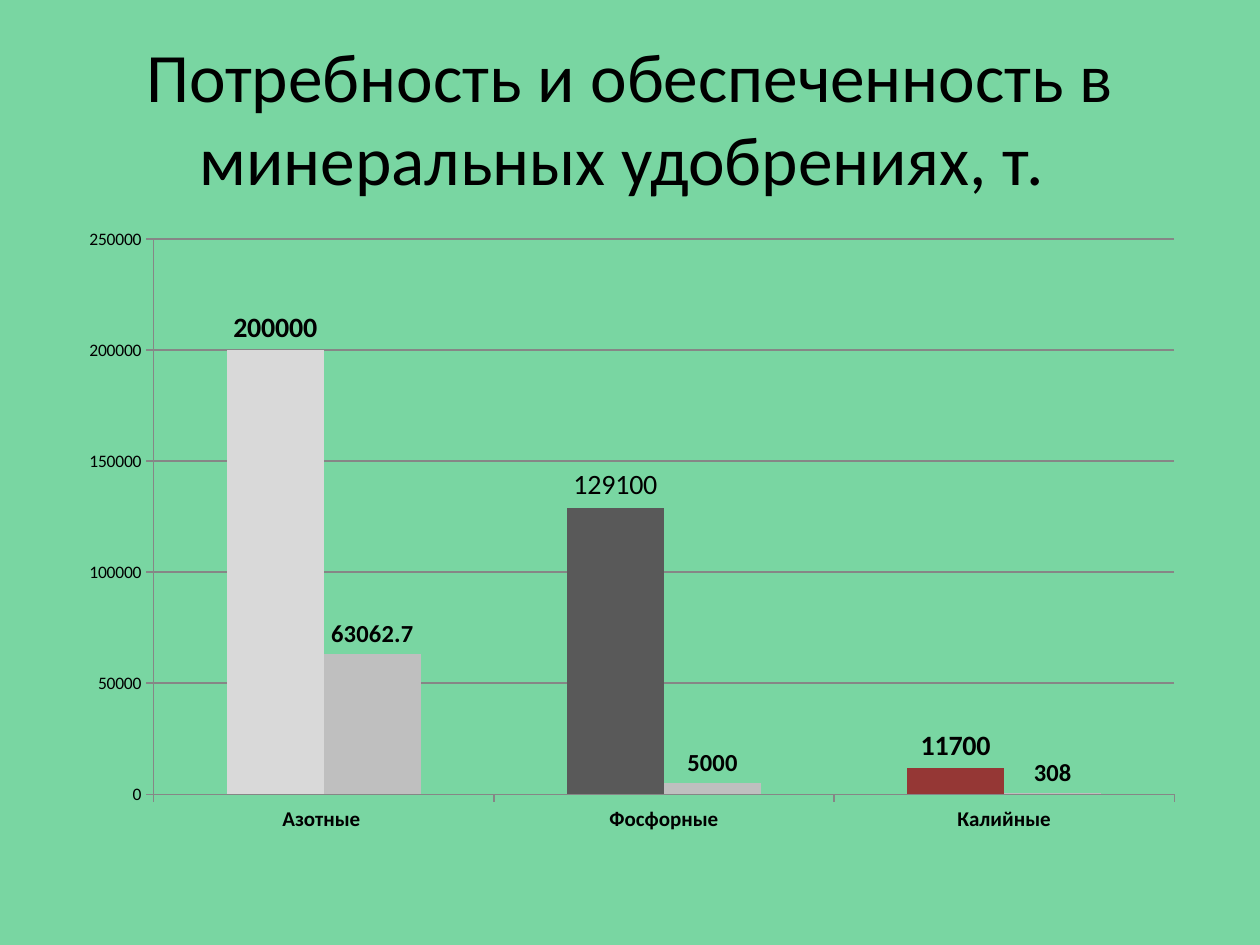
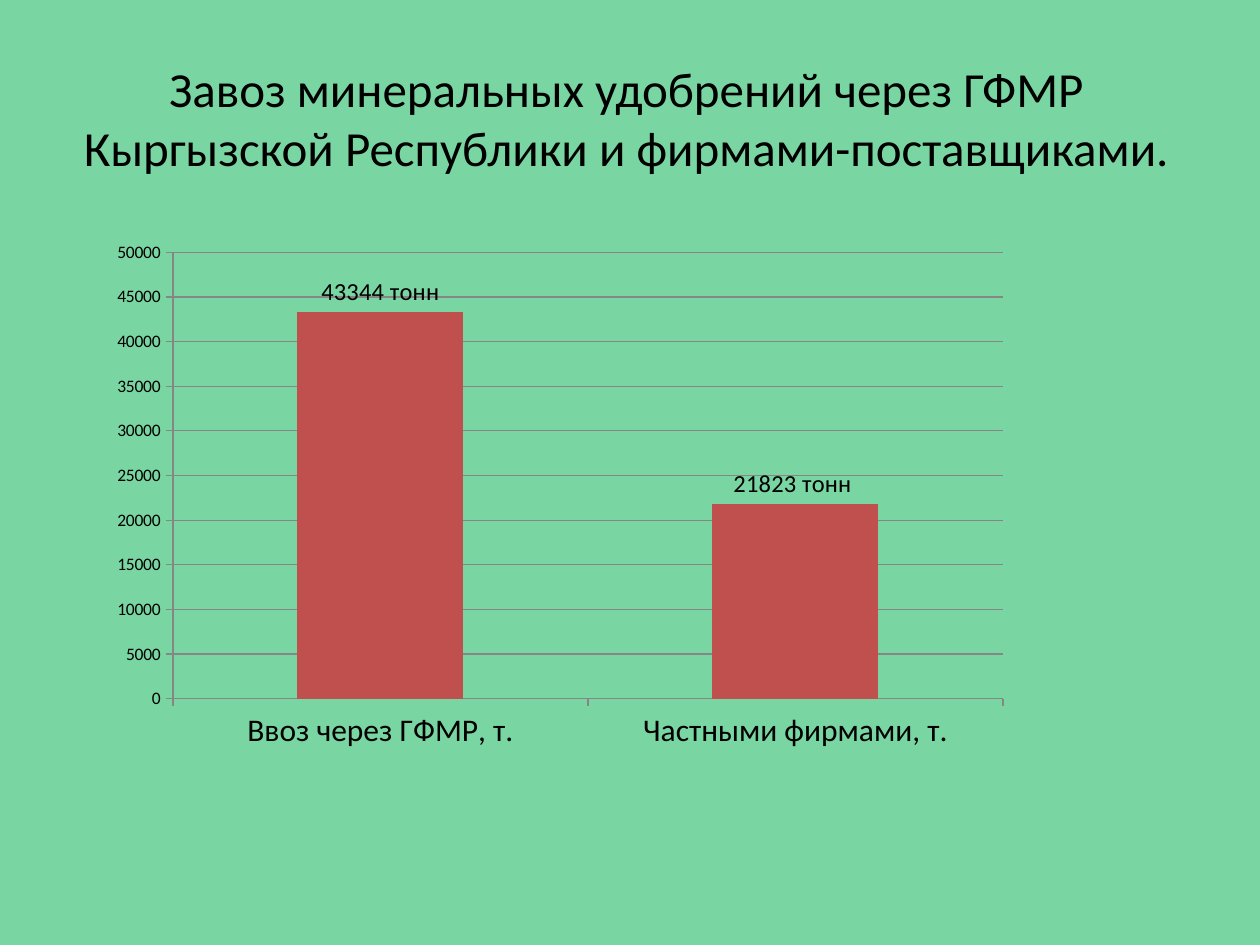
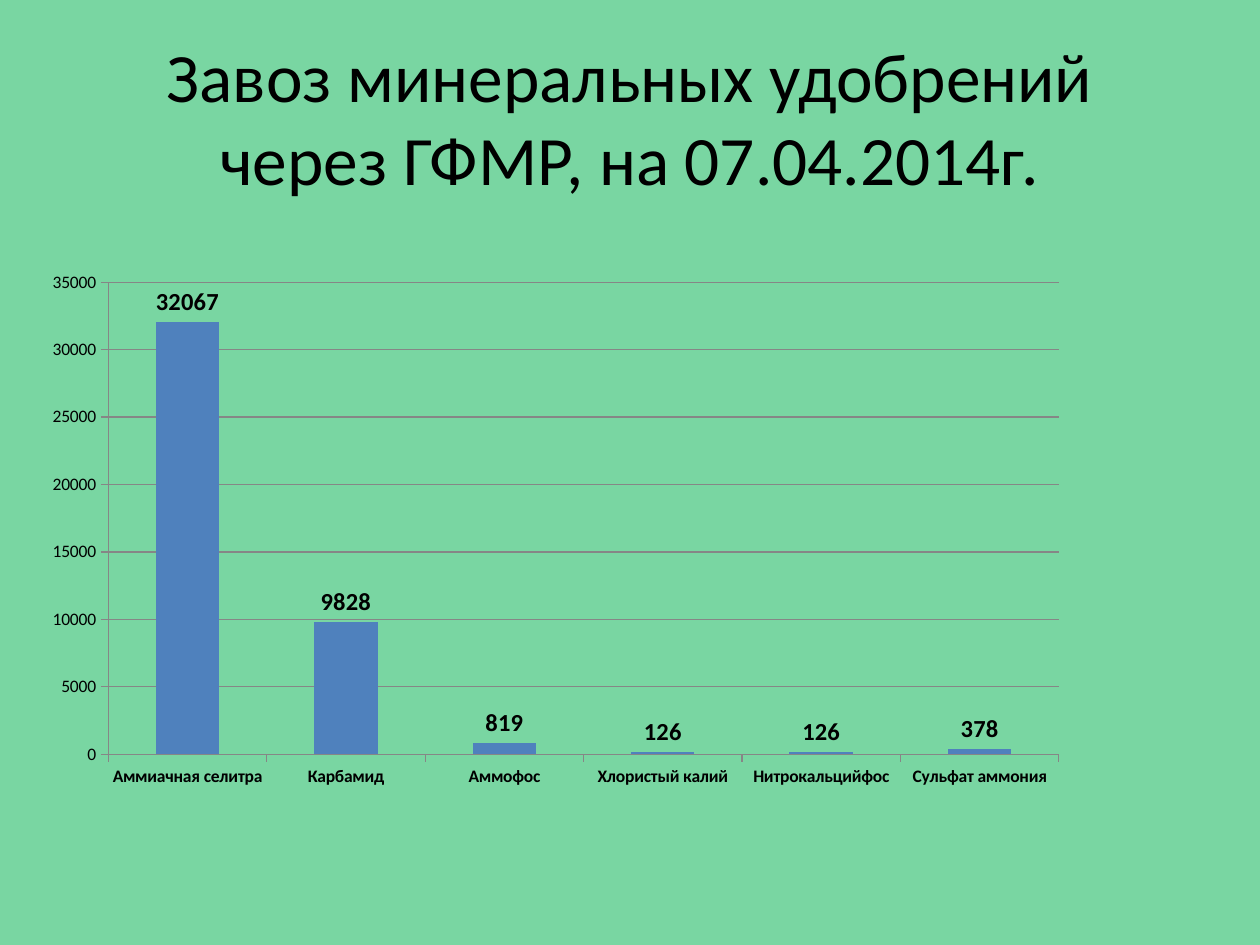
from pptx import Presentation
from pptx.chart.data import CategoryChartData
from pptx.dml.color import RGBColor
from pptx.enum import chart as ce, text
from pptx.oxml import parse_xml
from pptx.oxml.ns import nsdecls, qn
from pptx.util import Inches, Pt

BACKGROUND = RGBColor(0x79, 0xD6, 0xA2)
BLACK = RGBColor(0, 0, 0)
AXIS_GRAY = RGBColor(0x86, 0x86, 0x86)
BLUE = RGBColor(0x4F, 0x81, 0xBD)
RED = RGBColor(0xC0, 0x50, 0x4D)
DARK_RED = RGBColor(0x95, 0x37, 0x35)
PALE_GRAY = RGBColor(0xD9, 0xD9, 0xD9)
MID_GRAY = RGBColor(0xBF, 0xBF, 0xBF)
DARK_GRAY = RGBColor(0x59, 0x59, 0x59)
FONT = "Calibri"

# Boxes are left, top, width, height in inches; plot areas are shares of the chart.
SLIDES = [
    {
        "title": "Потребность и обеспеченность в минеральных удобрениях, т. ",
        "title_size": 39.6, "title_box": (0.5, 0.3, 9, 1.25),
        "chart_box": (0.5, 1.75, 9, 4.95), "plot_area": (0.08, 0.03, 0.9, 0.89),
        "categories": ["Азотные ", "Фосфорные", "Калийные"],
        "category_font": {"size": Pt(12), "bold": True}, "axis_max": 250000, "axis_step": 50000,
        "series": [
            {"values": [200000, 129100, 11700], "color": BLUE, "label_size": 16,
             "point_colors": [PALE_GRAY, DARK_GRAY, DARK_RED], "point_labels": {1: "129100"}},
            {"values": [63062.7, 5000, 308], "color": MID_GRAY, "label_size": 14},
        ],
    },
    {
        "title": "Завоз минеральных удобрений через ГФМР Кыргызской Республики"
                 " и фирмами-поставщиками.",
        "title_size": 28, "title_box": (0.47, 0.31, 9, 1.25),
        "chart_box": (0.5, 1.75, 9, 4.95), "plot_area": (0.097, 0.051, 0.732, 0.716),
        "categories": ["Ввоз через ГФМР, т.", "Частными фирмами, т."],
        "category_font": {"size": Pt(18), "bold": False}, "axis_max": 50000, "axis_step": 5000,
        "series": [
            {"values": [43344, 21823], "color": RED, "label_size": 14,
             "point_labels": {0: "43344 тонн", 1: "21823 тонн "}},
        ],
    },
    {
        "title": "Завоз минеральных удобрений через ГФМР, на 07.04.2014г.",
        "title_size": 39.6, "title_box": (0.5, 0.3, 9, 1.25),
        "chart_box": (0.23, 1.72, 9.55, 4.95), "plot_area": (0.066, 0.105, 0.79, 0.757),
        "categories": ["Аммиачная селитра", "Карбамид", "Аммофос", "Хлористый калий",
                       "Нитрокальцийфос", "Сульфат аммония"],
        "category_font": {"size": Pt(10), "bold": True}, "axis_max": 35000, "axis_step": 5000,
        "series": [
            {"values": [32067, 9828, 819, 126, 126, 378], "color": BLUE, "label_size": 14},
        ],
    },
]


def set_font(font, **values):
    """Apply the shared face and colour, then any further font values."""
    font.name = FONT
    font.color.rgb = BLACK
    for name, value in values.items():
        setattr(font, name, value)


def set_plot_area(chart, area):
    """Fix the inner plot area, given as shares of the chart's size."""
    plot_area = chart._chartSpace.chart.plotArea
    for old in plot_area.findall(qn("c:layout")):
        plot_area.remove(old)
    sizes = "".join(f'<c:{tag} val="{value}"/>' for tag, value in zip("xywh", area))
    plot_area.insert(0, parse_xml(
        f'<c:layout {nsdecls("c")}><c:manualLayout><c:layoutTarget val="inner"/>'
        f'<c:xMode val="edge"/><c:yMode val="edge"/>{sizes}</c:manualLayout></c:layout>'))


prs = Presentation()
prs.slide_width, prs.slide_height = Inches(10), Inches(7.5)
fill = prs.slide_master.background.fill
fill.solid()
fill.fore_color.rgb = BACKGROUND

for spec_data in SLIDES:
    s = prs.slides.add_slide(prs.slide_layouts[5])
    title = s.shapes.title
    title.left, title.top, title.width, title.height = map(Inches, spec_data["title_box"])
    tf = title.text_frame
    tf.text = spec_data["title"]
    tf.auto_size = text.MSO_AUTO_SIZE.NONE
    tf.vertical_anchor = text.MSO_ANCHOR.MIDDLE
    p = tf.paragraphs[0]
    p.alignment = text.PP_ALIGN.CENTER
    set_font(p.runs[0].font, size=Pt(spec_data["title_size"]))

    data = CategoryChartData()
    data.categories = spec_data["categories"]
    for i, row in enumerate(spec_data["series"], 1):
        data.add_series(f"Series {i}", row["values"])
    chart = s.shapes.add_chart(ce.XL_CHART_TYPE.COLUMN_CLUSTERED,
                               *map(Inches, spec_data["chart_box"]), data).chart
    chart.has_legend = False
    chart.has_title = False
    set_font(chart.font, size=Pt(10))
    set_plot_area(chart, spec_data["plot_area"])

    plot = chart.plots[0]
    plot.gap_width, plot.overlap, plot.vary_by_categories = 150, 0, False
    value_axis, category_axis = chart.value_axis, chart.category_axis
    value_axis.minimum_scale = 0
    value_axis.maximum_scale = spec_data["axis_max"]
    value_axis.major_unit = spec_data["axis_step"]
    value_axis.has_major_gridlines = True
    set_font(category_axis.tick_labels.font, **spec_data["category_font"])
    for axis in (value_axis, category_axis):
        axis.major_tick_mark = ce.XL_TICK_MARK.OUTSIDE
    for part in (value_axis, category_axis, value_axis.major_gridlines):
        part.format.line.color.rgb = AXIS_GRAY
        part.format.line.width = Pt(0.75)

    for series, row in zip(plot.series, spec_data["series"]):
        series.invert_if_negative = False
        series.format.fill.solid()
        series.format.fill.fore_color.rgb = row["color"]
        for i, color in enumerate(row.get("point_colors", [])):
            point_fill = series.points[i].format.fill
            point_fill.solid()
            point_fill.fore_color.rgb = color
        labels = series.data_labels
        labels.show_value = True
        labels.position = ce.XL_LABEL_POSITION.OUTSIDE_END
        set_font(labels.font, size=Pt(row["label_size"]), bold=True)
        for i, words in row.get("point_labels", {}).items():
            label = series.points[i].data_label
            label.text_frame.text = words
            label.position = ce.XL_LABEL_POSITION.OUTSIDE_END
            r = label.text_frame.paragraphs[0].runs[0]
            set_font(r.font, size=Pt(row["label_size"]), bold=False)

prs.save("out.pptx")
